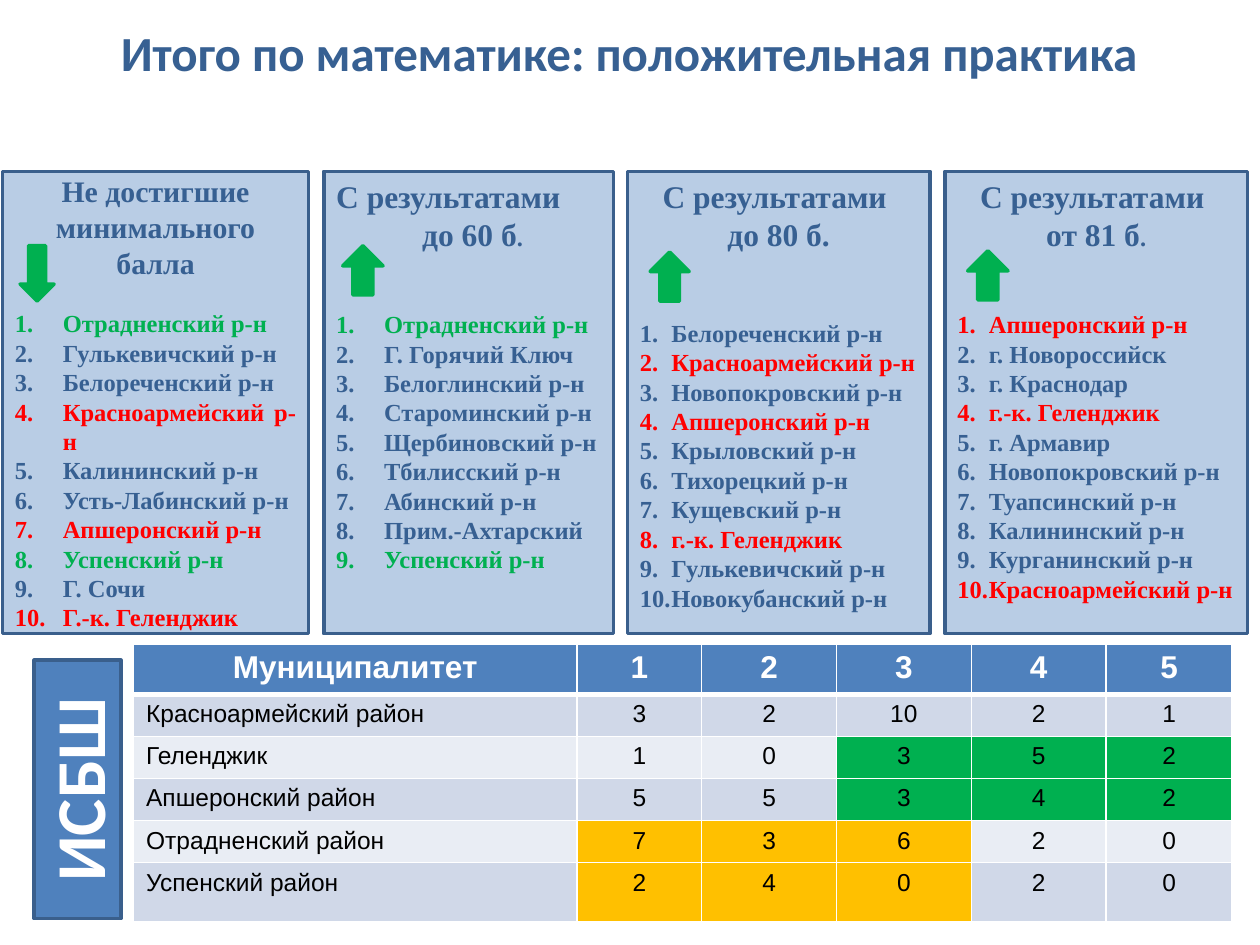
"""Build the slide on positive practice in mathematics results."""
from lxml import etree
from pptx import Presentation
from pptx.dml.color import RGBColor
from pptx.enum import shapes, text
from pptx.oxml import ns
from pptx.util import Inches, Pt

COLORS = {
    "navy": "376092", "card": "B9CDE5", "edge": "3A5F8C", "blue": "4F81BD",
    "green": "00B050", "red": "FF0000", "amber": "FFC000",
    "odd": "D0D8E8", "even": "E9EDF4", "white": "FFFFFF", "black": "000000",
}
LEADERS = {"Отрадненский": "green", "Успенский": "green", "Красноармейский": "red",
           "Апшеронский": "red", "Геленджик": "red"}
SHAPE = shapes.MSO_SHAPE
ALIGN = text.PP_ALIGN
SERIF = "Times New Roman"

CARDS = [
    dict(box=(0.02, 1.36, 2.43, 3.67), anchor=text.MSO_ANCHOR.MIDDLE,
         heading=[[("Не достигшие", 17)], [("минимального балла", 17)]],
         first=ALIGN.CENTER, gap=16, indent=0.38,
         arrow=(SHAPE.DOWN_ARROW, 0.14, 0.59, 0.27, 0.44),
         items=["Отрадненский р-н", "Гулькевичский р-н", "Белореченский р-н",
                "Красноармейский р-н", "Калининский р-н", "Усть-Лабинский р-н",
                "Апшеронский р-н", "Успенский р-н", "Г. Сочи", "Г.-к. Геленджик"]),
    dict(box=(2.57, 1.36, 2.3, 3.67), anchor=text.MSO_ANCHOR.TOP,
         heading=[[("С результатами", 18)], [(" до 60 б", 18), (".", 14)]],
         first=ALIGN.JUSTIFY, gap=32, indent=0.38,
         arrow=(SHAPE.UP_ARROW, 0.15, 0.59, 0.32, 0.39),
         items=["Отрадненский р-н", "Г. Горячий Ключ", "Белоглинский р-н",
                "Староминский р-н", "Щербиновский р-н", "Тбилисский р-н",
                "Абинский р-н", "Прим.-Ахтарский", "Успенский р-н"]),
    dict(box=(4.98, 1.36, 2.4, 3.67), anchor=text.MSO_ANCHOR.TOP,
         heading=[[("С результатами ", 18)], [("до 80 б.", 18)]],
         first=ALIGN.CENTER, gap=37, indent=0.25,
         arrow=(SHAPE.UP_ARROW, 0.18, 0.64, 0.31, 0.39),
         items=["Белореченский р-н", "Красноармейский р-н", "Новопокровский р-н",
                "Апшеронский р-н", "Крыловский р-н", "Тихорецкий р-н",
                "Кущевский р-н", "г.-к. Геленджик", "Гулькевичский р-н",
                "Новокубанский р-н"]),
    dict(box=(7.5, 1.36, 2.4, 3.67), anchor=text.MSO_ANCHOR.TOP,
         heading=[[("С результатами ", 18)], [("от 81 б", 18), (".", 14)]],
         first=ALIGN.CENTER, gap=32, indent=0.25,
         arrow=(SHAPE.UP_ARROW, 0.18, 0.63, 0.32, 0.39),
         items=["Апшеронский р-н", "г. Новороссийск", "г. Краснодар",
                "г.-к. Геленджик", "г. Армавир", "Новопокровский р-н",
                "Туапсинский р-н", "Калининский р-н", "Курганинский р-н",
                "Красноармейский р-н"]),
]
SCORES = [
    ["Муниципалитет", "1", "2", "3", "4", "5"],
    ["Красноармейский район", "3", "2", "10", "2", "1"],
    ["Геленджик", "1", "0", "3", "5", "2"],
    ["Апшеронский район", "5", "5", "3", "4", "2"],
    ["Отрадненский район", "7", "3", "6", "2", "0"],
    ["Успенский район", "2", "4", "0", "2", "0"],
]
MARKS = {**{(r, c): "green" for r in (2, 3) for c in (3, 4, 5)},
         **{(r, c): "amber" for r in (4, 5) for c in (1, 2, 3)}}


def rgb(name):
    """Return the named colour."""
    return RGBColor.from_string(COLORS[name])


def inches(box):
    """Turn a tuple of numbers into lengths."""
    return [Inches(v) for v in box]


def add_run(p, words, size, font, color, bold=True):
    """Add one formatted run to a paragraph."""
    r = p.add_run()
    r.text = words
    r.font.size, r.font.name, r.font.bold = Pt(size), font, bold
    r.font.color.rgb = rgb(color)


def add_block(s, kind, box, fill, line):
    """Add a flat preset shape with a two-point outline."""
    sp = s.shapes.add_shape(kind, *inches(box))
    sp.shadow.inherit = False
    sp.fill.solid()
    sp.fill.fore_color.rgb = rgb(fill)
    sp.line.color.rgb = rgb(line)
    sp.line.width = Pt(2)
    return sp


def add_title(s, box):
    """Add the centred slide title."""
    tf = s.shapes.add_textbox(*inches(box)).text_frame
    tf.word_wrap = True
    p = tf.paragraphs[0]
    p.alignment = ALIGN.CENTER
    add_run(p, "Итого по математике: положительная практика", 28, "Calibri", "navy")


def number(p, indent):
    """Give a paragraph an automatic number with a hanging indent."""
    pPr = p._p.get_or_add_pPr()
    pPr.set("marL", str(Inches(indent)))
    pPr.set("indent", str(-Inches(indent)))
    etree.SubElement(pPr, ns.qn("a:buAutoNum"), type="arabicPeriod")


def add_card(s, box, anchor, heading, first, gap, indent, arrow, items):
    """Add a card with a heading, a numbered list and a trend arrow."""
    tf = add_block(s, SHAPE.RECTANGLE, box, "card", "edge").text_frame
    tf.word_wrap = True
    tf.vertical_anchor = anchor
    for i, runs in enumerate(heading):
        p = tf.add_paragraph() if i else tf.paragraphs[0]
        p.alignment = ALIGN.CENTER if i else first
        for words, size in runs:
            add_run(p, words, size, SERIF, "navy")
    for i, item in enumerate(items):
        p = tf.add_paragraph()
        number(p, indent)
        p.alignment = ALIGN.JUSTIFY
        if i == 0:
            p.space_before = Pt(gap)
        color = next((c for name, c in LEADERS.items() if name in item), "navy")
        add_run(p, item, 14, SERIF, color)
    kind, dx, dy, w, h = arrow
    add_block(s, kind, (box[0] + dx, box[1] + dy, w, h), "green", "green")


def add_borders(cell, top, bottom):
    """Draw white borders round a table cell."""
    tcPr = cell._tc.get_or_add_tcPr()
    for side, width in (("L", 1), ("R", 1), ("T", top), ("B", bottom)):
        ln = etree.SubElement(tcPr, ns.qn(f"a:ln{side}"), w=str(Pt(width)))
        fill = etree.SubElement(ln, ns.qn("a:solidFill"))
        etree.SubElement(fill, ns.qn("a:srgbClr"), val=COLORS["white"])


def add_scores(s, box, widths, heights):
    """Add the table of schools by municipality."""
    table = s.shapes.add_table(len(heights), len(widths), *inches(box)).table
    for column, width in zip(table.columns, widths):
        column.width = Inches(width)
    for row, height in zip(table.rows, heights):
        row.height = Inches(height)
    for r, values in enumerate(SCORES):
        base = "blue" if r == 0 else "odd" if r % 2 else "even"
        for c, value in enumerate(values):
            cell = table.cell(r, c)
            add_borders(cell, 3 if r == 1 else 1, 3 if r == 0 else 1)
            cell.fill.solid()
            cell.fill.fore_color.rgb = rgb(MARKS.get((r, c), base))
            p = cell.text_frame.paragraphs[0]
            p.alignment = ALIGN.LEFT if r and not c else ALIGN.CENTER
            add_run(p, value, 14 if r else 18, "Arial", "black" if r else "white", r == 0)


def add_side_label(s, box):
    """Add the vertical label beside the table."""
    tf = add_block(s, SHAPE.RECTANGLE, box, "blue", "edge").text_frame
    tf.word_wrap = True
    tf.vertical_anchor = text.MSO_ANCHOR.MIDDLE
    tf._txBody.bodyPr.set("vert", "vert270")
    p = tf.paragraphs[0]
    p.alignment = ALIGN.CENTER
    add_run(p, "ИСБШ", 40, "Calibri", "white")


def main():
    """Build and save the slide."""
    prs = Presentation()
    prs.slide_width, prs.slide_height = Inches(10), Inches(7.5)
    s = prs.slides.add_slide(prs.slide_layouts[6])
    add_title(s, (0, 0.13, 9.98, 0.57))
    for card in CARDS:
        add_card(s, **card)
    add_scores(s, (1.06, 5.11, 8.73, 2.2), [3.52, 0.99, 1.07, 1.07, 1.07, 1],
               [0.37] + [0.31] * 4 + [0.47])
    add_side_label(s, (0.27, 5.24, 0.69, 2.05))
    prs.save("out.pptx")


if __name__ == "__main__":
    main()
